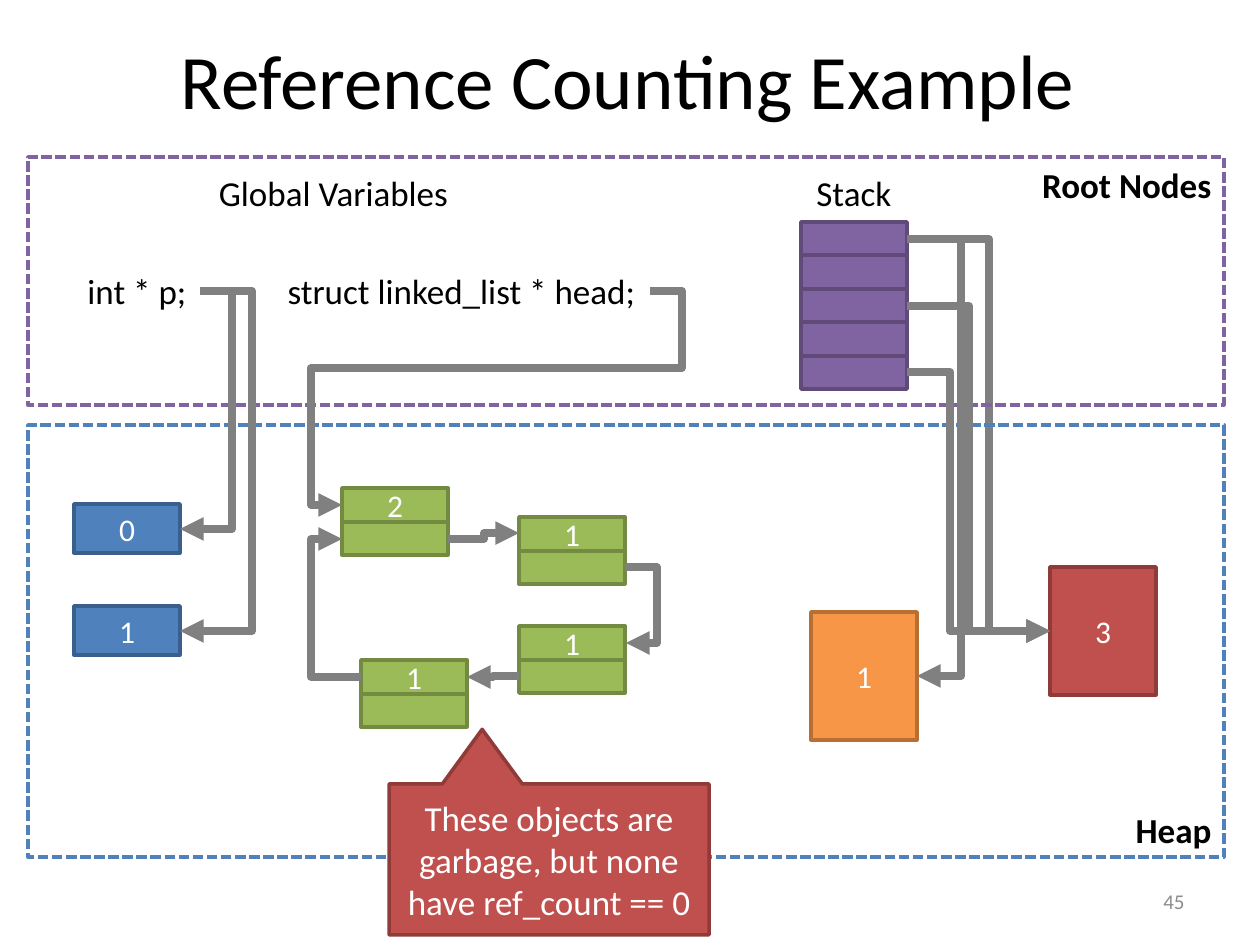
import pptx
import pptx.dml.color
import pptx.enum.dml
import pptx.enum.shapes
import pptx.enum.text
import pptx.oxml.ns
import pptx.util
import lxml.etree

RGBColor = pptx.dml.color.RGBColor
Kind = pptx.enum.shapes.MSO_SHAPE
Align = pptx.enum.text.PP_ALIGN
Anchor = pptx.enum.text.MSO_ANCHOR

BLACK = RGBColor(0x00, 0x00, 0x00)
WHITE = RGBColor(0xFF, 0xFF, 0xFF)
GRAY = RGBColor(0x80, 0x80, 0x80)
PAGE_GRAY = RGBColor(0x8C, 0x8C, 0x8C)
BLUE = RGBColor(0x4F, 0x81, 0xBD)
BLUE_EDGE = RGBColor(0x3A, 0x5F, 0x8C)
GREEN = RGBColor(0x9B, 0xBB, 0x59)
GREEN_EDGE = RGBColor(0x73, 0x8A, 0x42)
PURPLE = RGBColor(0x80, 0x64, 0xA2)
PURPLE_EDGE = RGBColor(0x5F, 0x4A, 0x78)
RED = RGBColor(0xC0, 0x50, 0x4D)
RED_EDGE = RGBColor(0x8E, 0x3B, 0x39)
ORANGE = RGBColor(0xF7, 0x96, 0x46)
ORANGE_EDGE = RGBColor(0xB7, 0x6F, 0x34)

EMU_PER_PX = 914400 / 126
FONT = "Calibri"
CELL_WIDTH = 106
STACK_LEFT, STACK_TOP, STACK_HEIGHT, STACK_CELLS = 801, 222, 167, 5
NODE_HEIGHT = 67

FRAMES = [
    ("Root Nodes", (28, 157, 1196, 248), PURPLE, Anchor.TOP),
    ("Heap", (28, 425, 1196, 432), BLUE, Anchor.BOTTOM),
]
TITLE = ("Reference Counting Example", (6, 0, 1244, 157))
PAGE_NUMBER = ("45", (903, 876, 294, 50))
LABELS = [
    ("Stack", (803, 165, 102, 55)),
    ("Global Variables", (205, 165, 257, 55)),
    ("int * p;", (74, 263, 126, 55)),
    ("struct linked_list * head;", (273, 263, 377, 55)),
]
NODES = [("2", 342, 488), ("1", 519, 517), ("1", 519, 626), ("1", 361, 660)]
OBJECTS = [
    ("0", (74, 504, CELL_WIDTH, 49), BLUE, BLUE_EDGE),
    ("1", (74, 606, CELL_WIDTH, 49), BLUE, BLUE_EDGE),
    ("3", (1050, 567, CELL_WIDTH, 128), RED, RED_EDGE),
    ("1", (811, 612, CELL_WIDTH, 128), ORANGE, ORANGE_EDGE),
]
CALLOUT = ("These objects are garbage, but none have ref_count == 0",
           (389, 784, 320, 151), (-0.209, -0.862))
REAR_ARROW = ((907, 239), (1050, 631), 989)
ARROWS = [
    ((448, 539), (519, 533), 484),
    ((625, 567), (626, 643), 657),
    ((519, 676), (467, 677), 493),
    ((361, 677), (342, 539), 311),
    ((200, 291), (180, 529), 232),
    ((200, 291), (180, 631), 252),
    ((907, 372), (1050, 631), 950),
    ((907, 306), (1050, 631), 969),
    ((907, 239), (917, 676), 961),
]
HEAD_ARROW = ((650, 291), (342, 505), 682, 368, 311)

deck = pptx.Presentation()


def emu(px):
    return pptx.util.Emu(round(px * EMU_PER_PX))


deck.slide_width, deck.slide_height = emu(1260), emu(945)
page = deck.slides.add_slide(deck.slide_layouts[6])


def write(shape, text, size, color, align=Align.CENTER, anchor=Anchor.MIDDLE,
          bold=False, wrap=True):
    frame = shape.text_frame
    frame.word_wrap = wrap
    frame.vertical_anchor = anchor
    para = frame.paragraphs[0]
    para.alignment = align
    span = para.add_run()
    span.text = text
    span.font.name = FONT
    span.font.size = pptx.util.Pt(size)
    span.font.color.rgb = color
    span.font.bold = bold


def add_text(text, bounds, size, color=BLACK, **style):
    write(page.shapes.add_textbox(*map(emu, bounds)), text, size, color, **style)


def add_box(bounds, fill, edge, text="", size=18, kind=Kind.RECTANGLE):
    box = page.shapes.add_shape(kind, *map(emu, bounds))
    box.shadow.inherit = False
    if fill is None:
        box.fill.background()
    else:
        box.fill.solid()
        box.fill.fore_color.rgb = fill
    box.line.color.rgb = edge
    box.line.width = pptx.util.Pt(2)
    if text:
        write(box, text, size, WHITE)
    return box


def add_column(left, top, height, texts, fill, edge):
    edges = [top + round(height * i / len(texts)) for i in range(len(texts) + 1)]
    for text, upper, lower in zip(texts, edges, edges[1:]):
        add_box((left, upper, CELL_WIDTH, lower - upper), fill, edge, text)


def add_arrow(start, end, *bends):
    qn = pptx.oxml.ns.qn
    arrow = page.shapes.add_connector(
        pptx.enum.shapes.MSO_CONNECTOR.ELBOW, *map(emu, start + end))
    arrow.line.color.rgb = GRAY
    arrow.line.width = pptx.util.Pt(4.5)
    properties = arrow.element.spPr
    geometry = properties.find(qn("a:prstGeom"))
    geometry.set("prst", f"bentConnector{len(bends) + 2}")
    guides = geometry.find(qn("a:avLst"))
    if guides is None:
        guides = lxml.etree.SubElement(geometry, qn("a:avLst"))
    for i, bend in enumerate(bends):
        axis = i % 2
        ratio = (bend - start[axis]) / (end[axis] - start[axis])
        lxml.etree.SubElement(
            guides, qn("a:gd"),
            name=f"adj{i + 1}" if len(bends) > 1 else "adj1",
            fmla=f"val {round(ratio * 100000)}")
    lxml.etree.SubElement(properties.find(qn("a:ln")), qn("a:tailEnd"), type="triangle")
    lxml.etree.SubElement(properties, qn("a:effectLst"))


add_text(*TITLE, 44)
add_text(*PAGE_NUMBER, 12, PAGE_GRAY, align=Align.RIGHT)
add_arrow(*REAR_ARROW)

for name, bounds, color, anchor in FRAMES:
    region = add_box(bounds, None, color)
    region.line.dash_style = pptx.enum.dml.MSO_LINE.SQUARE_DOT
    write(region, name, 20, BLACK, Align.RIGHT, anchor, bold=True)

for text, bounds in LABELS:
    add_text(text, bounds, 20, wrap=False)

add_column(STACK_LEFT, STACK_TOP, STACK_HEIGHT, [""] * STACK_CELLS, PURPLE, PURPLE_EDGE)
for count, left, top in NODES:
    add_column(left, top, NODE_HEIGHT, [count, ""], GREEN, GREEN_EDGE)
for count, bounds, fill, edge in OBJECTS:
    add_box(bounds, fill, edge, count)

for arrow in [HEAD_ARROW] + ARROWS:
    add_arrow(*arrow)

message, bounds, tip = CALLOUT
callout = add_box(bounds, RED, RED_EDGE, message, 20, Kind.RECTANGULAR_CALLOUT)
callout.adjustments[0], callout.adjustments[1] = tip

deck.save("out.pptx")
